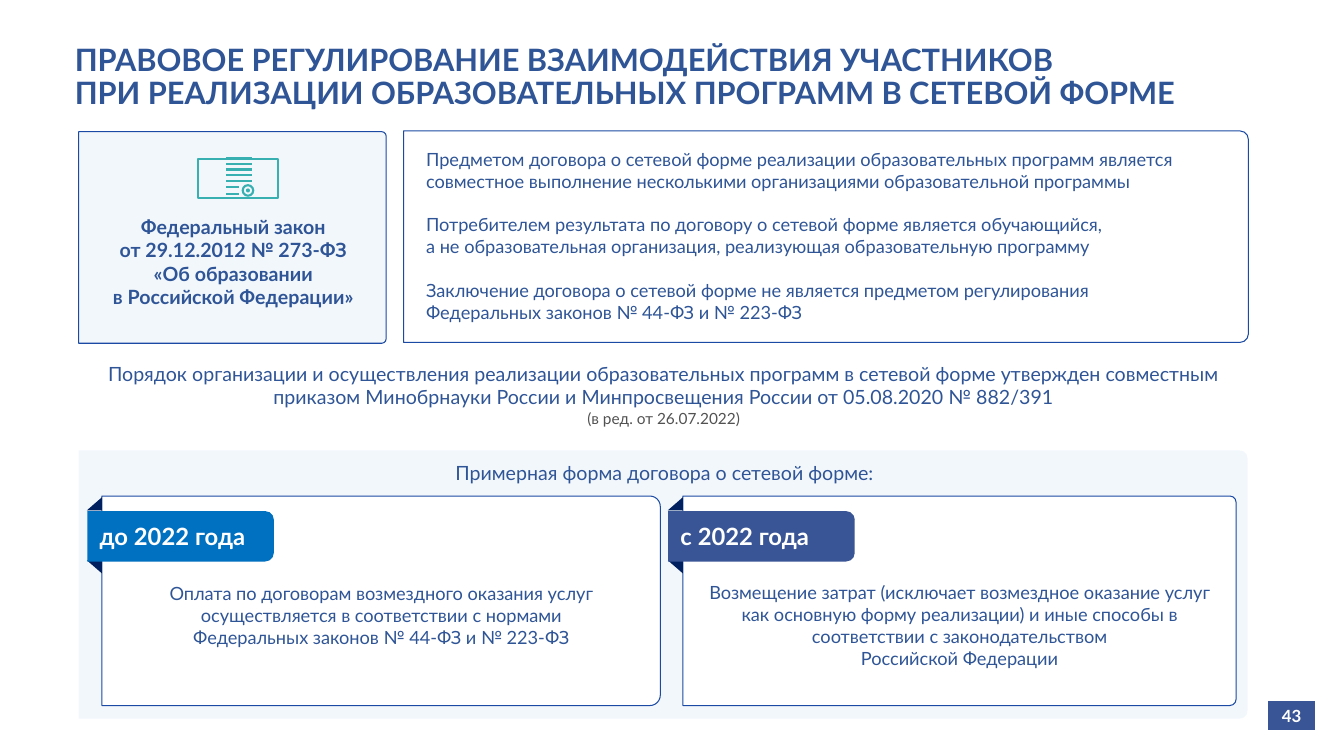
from copy import deepcopy

from lxml import etree
from pptx import Presentation
from pptx import util as u
from pptx.dml.color import RGBColor
from pptx.enum import shapes, text
from pptx.oxml.ns import qn

COLOURS = {
    "ink": "2F5597", "border": "1B4AA4", "panel": "F2F7FC", "white": "FFFFFF",
    "fold": "002060", "before": "0070C0", "since": "395595",
    "icon": "38AFB0", "note": "525252",
}
FORM = shapes.MSO_SHAPE
CENTER = text.PP_ALIGN.CENTER
LEFT = text.PP_ALIGN.LEFT


def colour(name):
    return RGBColor.from_string(COLOURS[name])


def write(frame, words, size=14, ink="ink", bold=False, align=LEFT, before=0, spacing=None):
    """Add one paragraph to the frame; a newline is a line break."""
    paragraph = frame.paragraphs[0]
    if paragraph.runs:
        paragraph = frame.add_paragraph()
    paragraph.alignment = align
    paragraph.space_before = u.Pt(before)
    if spacing:
        paragraph.line_spacing = spacing
    for number, line in enumerate(words.split("\n")):
        if number:
            paragraph.add_line_break()
        run = paragraph.add_run()
        run.text = line
        run.font.name, run.font.size, run.font.bold = "Lato", u.Pt(size), bold
        run.font.color.rgb = colour(ink)
    # Breaks take the size of the text around them
    for line_break in paragraph._p.findall(qn("a:br")):
        line_break.append(deepcopy(run._r.rPr))


class SlideBuilder:
    def __init__(self, deck):
        self.slide = deck.slides.add_slide(deck.slide_layouts[1])
        self.canvas = self.slide.shapes

    def paint(self, shape, fill=None, line=None, weight=0.75):
        shape.shadow.inherit = False
        if fill:
            shape.fill.solid()
            shape.fill.fore_color.rgb = colour(fill)
        else:
            shape.fill.background()
        if line:
            shape.line.color.rgb = colour(line)
            shape.line.width = u.Pt(weight)
        else:
            shape.line.fill.background()

    def shape(self, form, left, top, width, height, turn=0, adjust=(), **style):
        """Place a shape by its visible frame, whatever its turn."""
        if turn in (90, 270):
            left, top = left + (width - height) / 2, top + (height - width) / 2
            width, height = height, width
        shape = self.canvas.add_shape(form, *map(u.Cm, (left, top, width, height)))
        shape.rotation = turn
        for index, value in enumerate(adjust):
            shape.adjustments[index] = value
        self.paint(shape, **style)

    def card(self, left, top, width, height, corner, **style):
        self.shape(FORM.ROUND_2_SAME_RECTANGLE, left, top, width, height,
                   turn=90, adjust=(corner, 0), **style)

    def outline(self, points, closed, **style):
        builder = self.canvas.build_freeform(*points[0], scale=u.Cm(1))
        builder.add_line_segments(points[1:], close=closed)
        self.paint(builder.convert_to_shape(), **style)

    def stroke(self, x1, x2, y, line, weight):
        connector = self.canvas.add_connector(
            shapes.MSO_CONNECTOR.STRAIGHT, *map(u.Cm, (x1, y, x2, y)))
        connector.line.color.rgb = colour(line)
        connector.line.width = u.Pt(weight)
        etree.SubElement(connector._element.spPr, qn("a:effectLst"))

    def text(self, words, left, top, width, height, **style):
        box = self.canvas.add_textbox(*map(u.Cm, (left, top, width, height)))
        box.text_frame.word_wrap = True
        write(box.text_frame, words, **style)
        return box.text_frame

    def placeholder(self, index, words, left, top, width, height, anchor, **style):
        holder = self.slide.placeholders[index]
        holder.left, holder.top, holder.width, holder.height = map(
            u.Cm, (left, top, width, height))
        frame = holder.text_frame
        frame.auto_size = text.MSO_AUTO_SIZE.NONE
        frame.vertical_anchor = anchor
        properties = frame.paragraphs[0]._p.get_or_add_pPr()
        properties.set("marL", "0")
        properties.set("indent", "0")
        etree.SubElement(properties, qn("a:buNone"))
        write(frame, words, **style)
        # Bring in front of the cards drawn so far
        self.slide.shapes._spTree.append(holder._element)

    def page_number(self, number, left, top, width, height):
        table = self.canvas.add_table(1, 1, *map(u.Cm, (left, top, width, height))).table
        cell = table.cell(0, 0)
        cell.fill.solid()
        cell.fill.fore_color.rgb = colour("since")
        cell.vertical_anchor = text.MSO_ANCHOR.MIDDLE
        write(cell.text_frame, number, size=12, ink="white", bold=True, align=CENTER)

    def document_icon(self):
        self.canvas = self.slide.shapes.add_group_shape().shapes
        pen = {"line": "icon", "weight": 1.5}
        left, top, right, bottom, fold_x, fold_y = 5.46, 3.61, 6.58, 5.13, 5.74, 3.87
        cut = 0.05
        self.outline([(left, fold_y), (fold_x, top), (right - cut, top), (right, top + cut),
                      (right, bottom - cut), (right - cut, bottom), (left + cut, bottom),
                      (left, bottom - cut)], True, **pen)
        self.outline([(left, fold_y), (fold_x, fold_y), (fold_x, top)], False, **pen)
        for row in range(5):
            self.stroke(5.69, 6.35, 3.99 + 0.14 * row, **pen)
        for y in (4.72, 4.88):
            self.stroke(5.69, 6.02, y, **pen)
        self.shape(FORM.DONUT, 6.09, 4.64, 0.32, 0.32, adjust=(0.17,), fill="icon")
        self.shape(FORM.OVAL, 6.2, 4.75, 0.1, 0.1, fill="icon")
        self.canvas = self.slide.shapes

    def period(self, shift, width, corner, tag, label):
        """Card with a ribbon tag folded around its left edge."""
        self.card(2.57 + shift, 12.5, width, 5.28, corner, fill="white", line="border")
        for top, turn in ((12.53, 270), (14.12, 180)):
            self.shape(FORM.RIGHT_TRIANGLE, 2.19 + shift, top, 0.38, 0.33,
                       turn=turn, fill="fold")
        self.card(2.2 + shift, 12.88, 4.7, 1.27, 0.17, fill=tag)
        self.text(label, 2.26 + shift, 13.02, 4.7, 0.99, size=17, ink="white", bold=True)


def main():
    deck = Presentation()
    deck.slide_width, deck.slide_height = u.Cm(33.87), u.Cm(19.05)
    page = SlideBuilder(deck)

    # Title
    page.placeholder(
        0, "ПРАВОВОЕ РЕГУЛИРОВАНИЕ ВЗАИМОДЕЙСТВИЯ УЧАСТНИКОВ\n"
        "ПРИ РЕАЛИЗАЦИИ ОБРАЗОВАТЕЛЬНЫХ ПРОГРАММ В СЕТЕВОЙ ФОРМЕ",
        1.63, 0.79, 30.91, 2.36, text.MSO_ANCHOR.MIDDLE, size=22, bold=True, spacing=0.9)

    # Federal law
    page.card(1.98, 3.32, 7.75, 5.33, 0.02, fill="panel", line="border")
    page.placeholder(
        1, "Федеральный закон\nот 29.12.2012 № 273-ФЗ\n«Об образовании\nв Российской Федерации»",
        2.26, 5.28, 7.24, 3.25, text.MSO_ANCHOR.TOP, bold=True, align=CENTER)
    page.document_icon()

    # Contract rules
    page.card(10.17, 3.3, 21.29, 5.33, 0.04, line="border")
    rules = page.text(
        "Предметом договора о сетевой форме реализации образовательных программ является\n"
        "совместное выполнение несколькими организациями образовательной программы",
        10.49, 3.61, 21.11, 4.7, size=13)
    for rule in (
        "Потребителем результата по договору о сетевой форме является обучающийся,\n"
        "а не образовательная организация, реализующая образовательную программу",
        "Заключение договора о сетевой форме не является предметом регулирования\n"
        "Федеральных законов № 44-ФЗ и № 223-ФЗ",
    ):
        write(rules, rule, size=13, before=15.6)

    # Joint order
    order = page.text(
        "Порядок организации и осуществления реализации образовательных программ в сетевой "
        "форме утвержден совместным приказом Минобрнауки России и Минпросвещения России "
        "от 05.08.2020 № 882/391", 2.06, 8.99, 29.34, 1.96, align=CENTER)
    write(order, "(в ред. от 26.07.2022)", size=11, ink="note", align=CENTER)

    # Contract form by period
    page.card(1.98, 11.35, 29.46, 6.76, 0.03, fill="panel")
    page.text("Примерная форма договора о сетевой форме:", 10.31, 11.48, 12.88, 0.86,
              align=CENTER)
    page.period(0, 14.07, 0.05, "before", "до 2022 года")
    page.period(14.64, 13.94, 0.03, "since", "c 2022 года")
    page.text("Оплата по договорам возмездного оказания услуг\n"
              "осуществляется в соответствии с нормами\nФедеральных законов № 44-ФЗ и № 223-ФЗ",
              2.8, 14.55, 13.61, 1.96, size=13, align=CENTER)
    page.text("Возмещение затрат (исключает возмездное оказание услуг как основную форму "
              "реализации) и иные способы в соответствии с законодательством\n"
              "Российской Федерации", 17.4, 14.53, 13.56, 2.49, size=13, align=CENTER)

    page.page_number("43", 31.95, 17.65, 1.2, 0.76)
    deck.save("out.pptx")


if __name__ == "__main__":
    main()
